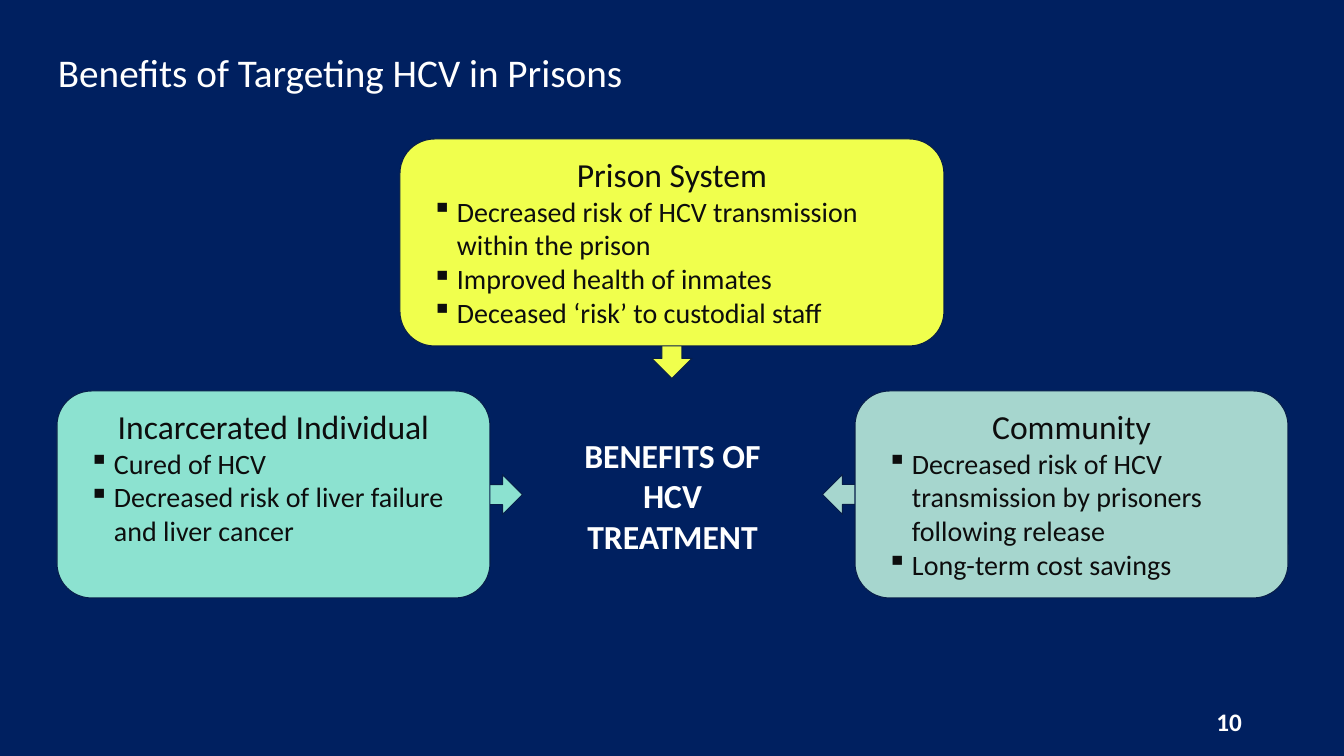
from dataclasses import dataclass

from lxml import etree
from pptx import Presentation
from pptx import util as u
from pptx.dml.color import RGBColor
from pptx.enum import shapes, text
from pptx.oxml import ns

# Content
TITLE = "Benefits of Targeting HCV in Prisons"
HUB = "BENEFITS OF HCV TREATMENT"
PAGE = "10"

# Lengths in px; side is the card edge its arrow leaves from
BENEFITS = [
    dict(heading="Prison System", fill="F0FF4D", box=(400, 139, 544, 207), side="bottom",
         points=["Decreased risk of HCV transmission within the prison",
                 "Improved health of inmates",
                 "Deceased ‘risk’ to custodial staff"]),
    dict(heading="Community", fill="A6D6CE", box=(855, 391, 433, 207), side="left",
         points=["Decreased risk of HCV transmission by prisoners following release",
                 "Long-term cost savings"]),
    dict(heading="Incarcerated Individual", fill="8CE2D0", box=(57, 391, 433, 207), side="right",
         points=["Cured of HCV",
                 "Decreased risk of liver failure and liver cancer"]),
]
TITLE_BOX = (48, 10, 1266, 91)
HUB_BOX = (555, 430, 235, 132)
PAGE_BOX = (950, 701, 302, 40)
ARROW_W, ARROW_H, ARROW_GAP = 40, 43, 11
BULLET_LEFT, BULLET_HANG = 37, 25


@dataclass(frozen=True)
class Theme:
    font: str = "Calibri"
    background: str = "002060"
    outline: str = "071D49"
    light: str = "FFFFFF"
    dark: str = "0D0D0D"
    title: int = 28
    heading: int = 24
    body: int = 20
    page: int = 18


THEME = Theme()
SCALE = 914400 / 100.8


def px(*lengths):
    return [u.Emu(round(length * SCALE)) for length in lengths]


def write(paragraph, words, size, color, bold=False, align=text.PP_ALIGN.LEFT):
    paragraph.alignment = align
    run = paragraph.add_run()
    run.text = words
    run.font.name = THEME.font
    run.font.size = u.Pt(size)
    run.font.bold = bold
    run.font.color.rgb = RGBColor.from_string(color)


def add_bullet(paragraph):
    props = paragraph._p.get_or_add_pPr()
    left, hang = px(BULLET_LEFT, BULLET_HANG)
    props.set("marL", str(left))
    props.set("indent", str(-hang))
    etree.SubElement(props, ns.qn("a:buChar")).set("char", "▪")


def add_label(slide, box, words, size, **style):
    frame = slide.shapes.add_textbox(*px(*box)).text_frame
    frame.word_wrap = True
    write(frame.paragraphs[0], words, size, THEME.light, **style)
    return frame


def add_block(slide, kind, box, fill):
    block = slide.shapes.add_shape(kind, *px(*box))
    block.shadow.inherit = False
    block.fill.solid()
    block.fill.fore_color.rgb = RGBColor.from_string(fill)
    block.line.color.rgb = RGBColor.from_string(THEME.outline)
    block.line.width = u.Pt(0.75)
    return block


def add_arrow(slide, benefit):
    x, y, w, h = benefit["box"]
    center_x, center_y, turn = {
        "bottom": (x + w / 2, y + h + ARROW_GAP, 0),
        "left": (x - ARROW_GAP, y + h / 2, 90),
        "right": (x + w + ARROW_GAP, y + h / 2, 270),
    }[benefit["side"]]
    box = (center_x - ARROW_W / 2, center_y - ARROW_H / 2, ARROW_W, ARROW_H)
    arrow = add_block(slide, shapes.MSO_SHAPE.DOWN_ARROW, box, benefit["fill"])
    arrow.rotation = turn


def add_card(slide, benefit):
    card = add_block(slide, shapes.MSO_SHAPE.ROUNDED_RECTANGLE, benefit["box"], benefit["fill"])
    frame = card.text_frame
    frame.word_wrap = True
    frame.vertical_anchor = text.MSO_ANCHOR.TOP
    write(frame.paragraphs[0], benefit["heading"], THEME.heading, THEME.dark,
          align=text.PP_ALIGN.CENTER)
    for point in benefit["points"]:
        paragraph = frame.add_paragraph()
        write(paragraph, point, THEME.body, THEME.dark)
        add_bullet(paragraph)


def main():
    deck = Presentation()
    deck.slide_width, deck.slide_height = px(1344, 756)
    slide = deck.slides.add_slide(deck.slide_layouts[6])
    slide.background.fill.solid()
    slide.background.fill.fore_color.rgb = RGBColor.from_string(THEME.background)

    # Arrows sit behind the cards
    for benefit in BENEFITS:
        add_arrow(slide, benefit)
    for benefit in BENEFITS:
        add_card(slide, benefit)

    # Title, hub and page number
    title = add_label(slide, TITLE_BOX, TITLE, THEME.title)
    title.vertical_anchor = text.MSO_ANCHOR.BOTTOM
    title.paragraphs[0].line_spacing = 0.95
    add_label(slide, HUB_BOX, HUB, THEME.heading, bold=True, align=text.PP_ALIGN.CENTER)
    add_label(slide, PAGE_BOX, PAGE, THEME.page, bold=True, align=text.PP_ALIGN.RIGHT)

    deck.save("out.pptx")


if __name__ == "__main__":
    main()
